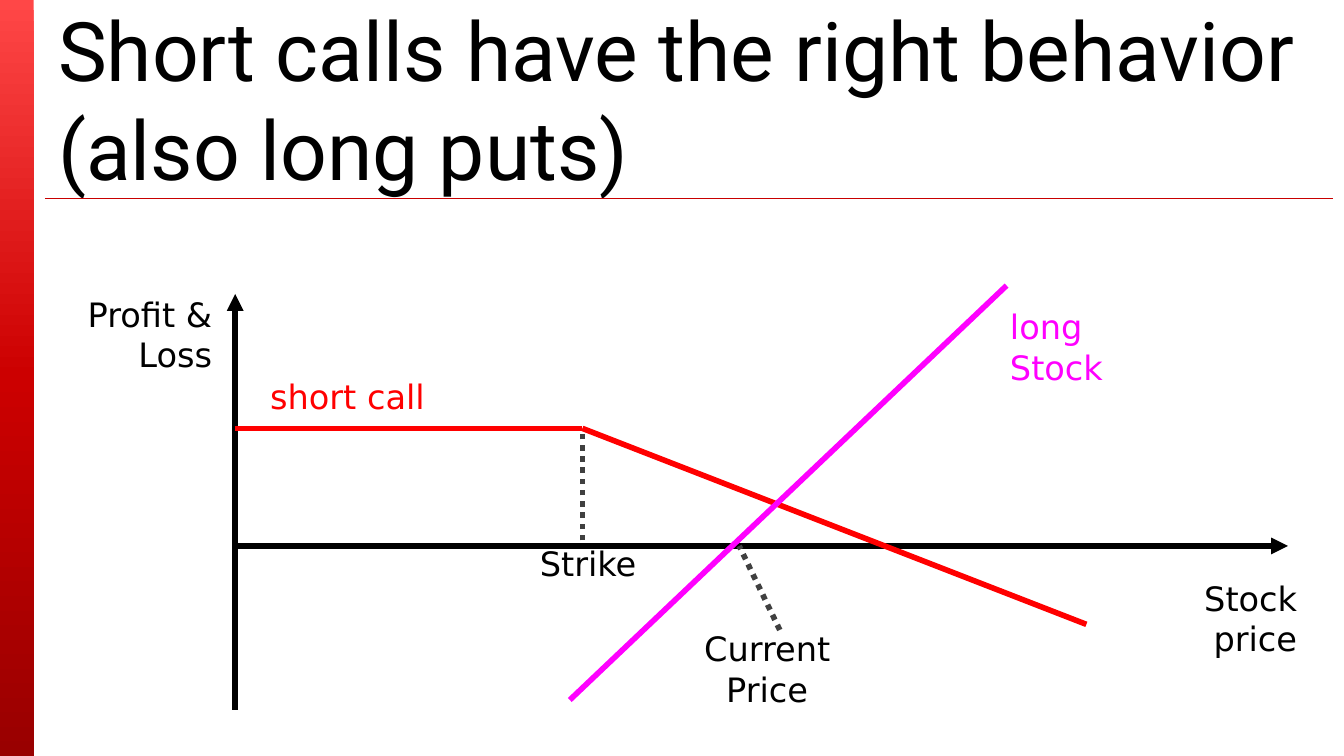
import copy
import pptx
import pptx.dml.color
import pptx.enum.dml
import pptx.enum.shapes
import pptx.enum.text
import pptx.oxml
import pptx.oxml.ns
import pptx.util

PX = 9525
COLORS = {"text": "000000", "call": "FF0000", "stock": "FF00FF", "guide": "404040",
          "rule": "C80000", "paper": "FFFFFF",
          "bar_top": "FF4747", "bar_mid": "CC0000", "bar_end": "990000"}
ALIGN = pptx.enum.text.PP_ALIGN


def px(*values):
    return [pptx.util.Emu(v * PX) for v in values]


def rgb(name):
    return pptx.dml.color.RGBColor.from_string(COLORS[name])


def add_line(s, start, end, color, width=3, dash=None, arrow=False):
    line = s.shapes.add_connector(pptx.enum.shapes.MSO_CONNECTOR.STRAIGHT, *px(*start, *end))
    line.line.color.rgb = rgb(color)
    line.line.width = pptx.util.Pt(width)
    if dash:
        line.line.dash_style = dash
    if arrow:
        ln = line.line._get_or_add_ln()
        ln.append(pptx.oxml.parse_xml(
            f'<a:tailEnd {pptx.oxml.ns.nsdecls("a")} type="triangle"/>'))
    line._element.spPr.append(pptx.oxml.parse_xml(
        f'<a:effectLst {pptx.oxml.ns.nsdecls("a")}/>'))


def add_label(s, box, text, color, align, wrap=True):
    tf = s.shapes.add_textbox(*px(*box)).text_frame
    tf.word_wrap = wrap
    tf.auto_size = pptx.enum.text.MSO_AUTO_SIZE.SHAPE_TO_FIT_TEXT
    p = tf.paragraphs[0]
    p.text = text
    p.alignment = align
    p.font.name = "DejaVu Sans"
    p.font.size = pptx.util.Pt(18)
    p.font.color.rgb = rgb(color)


def add_side_bar(s, x, y, w, h):
    sp = s.shapes.add_shape(pptx.enum.shapes.MSO_SHAPE.RECTANGLE, *px(x, y, w, h))
    sp.shadow.inherit = False
    sp.line.fill.background()
    sp.fill.gradient()
    sp.fill.gradient_angle = 270
    first = sp.fill._fill._gradFill.gsLst[0]
    first.addnext(copy.deepcopy(first))
    names = ("bar_top", "bar_mid", "bar_end")
    for stop, name, position in zip(sp.fill.gradient_stops, names, (0, 0.5, 1)):
        stop.color.rgb = rgb(name)
        stop.position = position


def add_title(s, x, y, w, h):
    add_line(s, (x, y + h + 8), (x + w, y + h + 8), "rule", 0.75)
    title = s.shapes.title
    title.left, title.top, title.width, title.height = px(x, y, w, h)
    title.fill.solid()
    title.fill.fore_color.rgb = rgb("paper")
    tf = title.text_frame
    tf.word_wrap = True
    tf.auto_size = pptx.enum.text.MSO_AUTO_SIZE.NONE
    tf.vertical_anchor = pptx.enum.text.MSO_ANCHOR.MIDDLE
    p = tf.paragraphs[0]
    p.text = "Short calls have the right behavior (also long puts)"
    p.alignment = ALIGN.LEFT
    p.font.name = "Roboto"
    p.font.size = pptx.util.Pt(44)
    p.font.color.rgb = rgb("text")


def add_payoff(s, x, y, w, h):
    axis_x, axis_y = x + 120, y + 186
    strike = (x + 368, y + 102)
    dots = pptx.enum.dml.MSO_LINE.ROUND_DOT

    add_line(s, (axis_x, y + h), (axis_x, y + 6), "text", arrow=True)
    add_line(s, (axis_x, axis_y), (x + w, axis_y), "text", arrow=True)
    add_line(s, strike, (x + 728, y + 242), "call")
    add_line(s, (axis_x, strike[1]), strike, "call")
    add_line(s, (x + 359, y + 296), (x + 671, y), "stock")
    add_line(s, (x + 509, y + 246), (x + 480, axis_y), "guide", dash=dots)
    add_line(s, (strike[0], axis_y - 4), strike, "guide", dash=dots)

    labels = [
        ("Profit & Loss", 1, 1, 112, 55, "text", ALIGN.RIGHT, True),
        ("short call", 134, 60, 131, 38, "call", ALIGN.RIGHT, False),
        ("long Stock", 664, 10, 144, 68, "stock", ALIGN.LEFT, True),
        ("Strike", 312, 179, 104, 38, "text", ALIGN.RIGHT, True),
        ("Current Price", 432, 240, 136, 68, "text", ALIGN.CENTER, True),
        ("Stock price", 784, 204, 104, 68, "text", ALIGN.RIGHT, True),
    ]
    for text, dx, dy, lw, lh, color, align, wrap in labels:
        add_label(s, (x + dx, y + dy, lw, lh), text, color, align, wrap)


def main():
    prs = pptx.Presentation()
    prs.slide_width, prs.slide_height = px(960, 540)
    s = prs.slides.add_slide(prs.slide_layouts[5])
    add_side_bar(s, 0, 0, 24, 540)
    add_title(s, 32, 6, 920, 128)
    add_payoff(s, 48, 204, 872, 303)
    prs.save("out.pptx")


if __name__ == "__main__":
    main()
